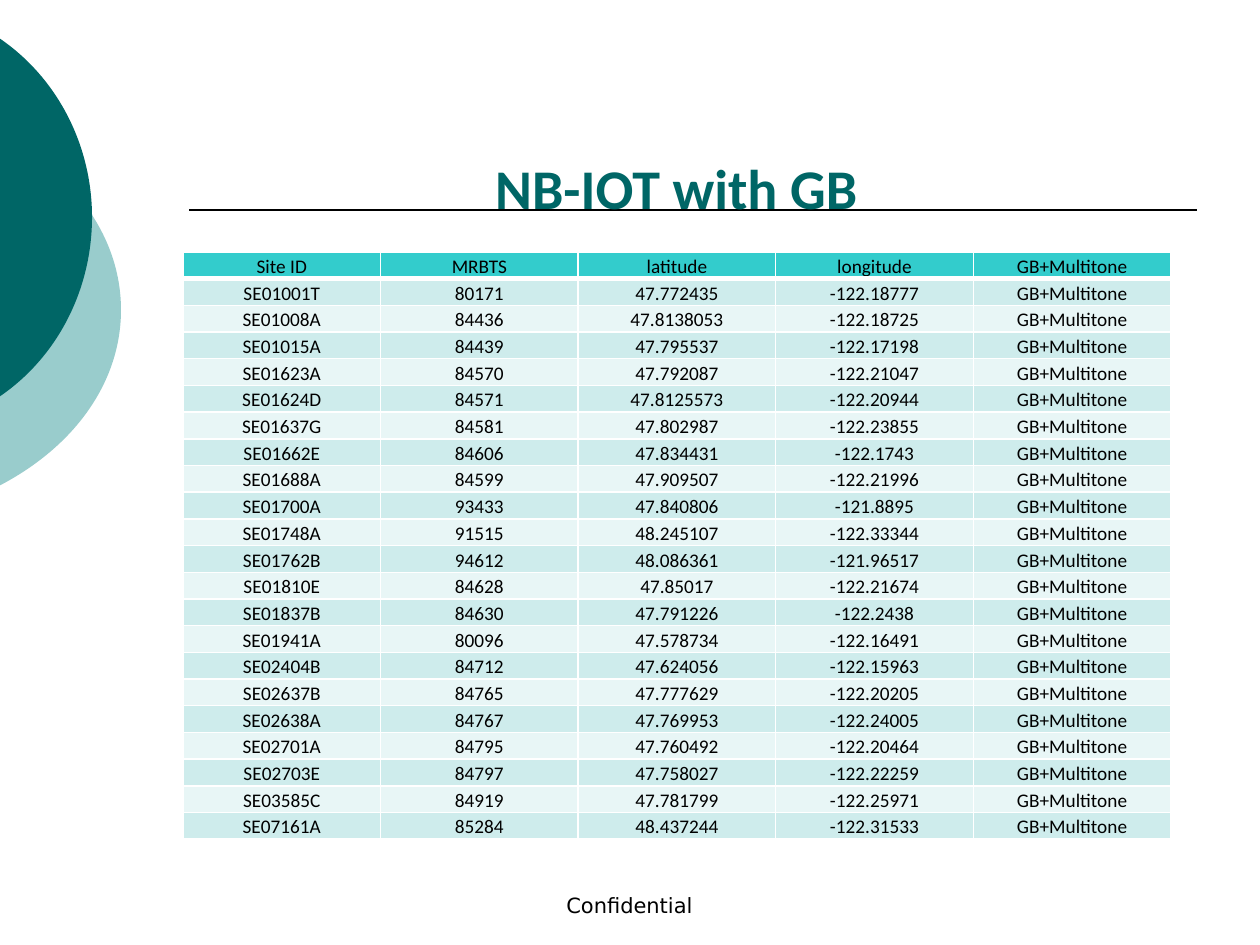
from lxml import etree
from pptx import Presentation
from pptx.dml.color import RGBColor
from pptx.enum import shapes, text
from pptx.oxml import ns
from pptx.util import Emu, Pt

# Content
TITLE = "NB-IOT with GB"
FOOTER = "Confidential"
MODE = "GB+Multitone"
HEADINGS = ("Site ID", "MRBTS", "latitude", "longitude", MODE)
SITES = [
    ("SE01001T", "80171", "47.772435", "-122.18777"),
    ("SE01008A", "84436", "47.8138053", "-122.18725"),
    ("SE01015A", "84439", "47.795537", "-122.17198"),
    ("SE01623A", "84570", "47.792087", "-122.21047"),
    ("SE01624D", "84571", "47.8125573", "-122.20944"),
    ("SE01637G", "84581", "47.802987", "-122.23855"),
    ("SE01662E", "84606", "47.834431", "-122.1743"),
    ("SE01688A", "84599", "47.909507", "-122.21996"),
    ("SE01700A", "93433", "47.840806", "-121.8895"),
    ("SE01748A", "91515", "48.245107", "-122.33344"),
    ("SE01762B", "94612", "48.086361", "-121.96517"),
    ("SE01810E", "84628", "47.85017", "-122.21674"),
    ("SE01837B", "84630", "47.791226", "-122.2438"),
    ("SE01941A", "80096", "47.578734", "-122.16491"),
    ("SE02404B", "84712", "47.624056", "-122.15963"),
    ("SE02637B", "84765", "47.777629", "-122.20205"),
    ("SE02638A", "84767", "47.769953", "-122.24005"),
    ("SE02701A", "84795", "47.760492", "-122.20464"),
    ("SE02703E", "84797", "47.758027", "-122.22259"),
    ("SE03585C", "84919", "47.781799", "-122.25971"),
    ("SE07161A", "85284", "48.437244", "-122.31533"),
]
# Each disc: colour, frame of the whole disc, and two joined Bezier curves
# along its visible edge, from top to bottom
DISCS = [
    ("99CCCC", (-446, 94, 567, 431),
     [(-1, 134), (76, 174), (121, 239), (121, 310),
      (121, 381), (76, 446), (-1, 486)]),
    ("006666", (-334, 0, 426, 435),
     [(-1, 38), (58, 78), (92, 146), (92, 217),
      (92, 289), (58, 357), (-1, 397)]),
]
HEADER_FILL, BANDS = "33CCCC", ("CEECEC", "E8F6F6")
TITLE_BOX = (183, 116, 987, 111)
TABLE_BOX = (183, 252, 988, 588)
FOOTER_BOX = (430, 861, 399, 63)
RULE = (189, 210, 1197, 210)


def px(length):
    return Emu(round(length * 914400 / 126))


def box(lengths):
    return [px(length) for length in lengths]


def color(value):
    return RGBColor.from_string(value)


def place(shape, lengths):
    shape.left, shape.top, shape.width, shape.height = box(lengths)


def write(frame, words, font, size, ink="000000", bold=False):
    paragraph = frame.paragraphs[0]
    paragraph.alignment = text.PP_ALIGN.CENTER
    run = paragraph.add_run()
    run.text = words
    run.font.name, run.font.size, run.font.bold = font, Pt(size), bold
    run.font.color.rgb = color(ink)


def bend(shape, frame, curve):
    """Give the freeform a curved edge inside its frame."""
    left, top, width, height = frame
    outline = shape._element.find(".//" + ns.qn("a:path"))
    for part in list(outline):
        outline.remove(part)
    outline.set("w", str(width))
    outline.set("h", str(height))
    for command, points in (("moveTo", curve[:1]), ("cubicBezTo", curve[1:4]),
                            ("cubicBezTo", curve[4:]), ("close", [])):
        step = etree.SubElement(outline, ns.qn("a:" + command))
        for x, y in points:
            etree.SubElement(step, ns.qn("a:pt"), x=str(x - left), y=str(y - top))


def border(cell, side, points):
    line = etree.SubElement(cell._tc.get_or_add_tcPr(), ns.qn("a:ln" + side),
                            w=str(Pt(points)))
    fill = etree.SubElement(line, ns.qn("a:solidFill"))
    etree.SubElement(fill, ns.qn("a:srgbClr"), val="FFFFFF")


deck = Presentation()
deck.slide_width, deck.slide_height = px(1260), px(945)
slide = deck.slides.add_slide(deck.slide_layouts[5])

# Discs at the left edge
for fill, frame, curve in DISCS:
    builder = slide.shapes.build_freeform(*curve[0], scale=px(1))
    builder.add_line_segments(curve[3::3], close=True)
    disc = builder.convert_to_shape()
    place(disc, frame)
    bend(disc, frame, curve)
    disc.shadow.inherit = False
    disc.fill.solid()
    disc.fill.fore_color.rgb = color(fill)
    disc.line.fill.background()

# Rule under the title
rule = slide.shapes.add_connector(shapes.MSO_CONNECTOR.STRAIGHT, *box(RULE))
rule.line.color.rgb = color("000000")
rule.line.width = Pt(1)
etree.SubElement(rule._element.spPr, ns.qn("a:effectLst"))

# Title, brought in front of the rule
title = slide.shapes.title
place(title, TITLE_BOX)
title.text_frame.auto_size = text.MSO_AUTO_SIZE.NONE
title.text_frame.vertical_anchor = text.MSO_ANCHOR.BOTTOM
write(title.text_frame, TITLE, "Calibri", 32, "006666", True)
title.element.getparent().append(title.element)

# Footer
footer = slide.shapes.add_textbox(*box(FOOTER_BOX)).text_frame
footer.word_wrap = True
footer.vertical_anchor = text.MSO_ANCHOR.BOTTOM
write(footer, FOOTER, "DejaVu Sans", 12)

# Site table
rows = [HEADINGS] + [(*site, MODE) for site in SITES]
sites = slide.shapes.add_table(len(rows), len(HEADINGS), *box(TABLE_BOX)).table
for r, row in enumerate(rows):
    for c, words in enumerate(row):
        cell = sites.cell(r, c)
        cell.margin_left = cell.margin_right = cell.margin_top = px(1)
        cell.margin_bottom = 0
        cell.vertical_anchor = text.MSO_ANCHOR.BOTTOM
        for side in "LRTB":
            under_header = (r, side) in ((0, "B"), (1, "T"))
            border(cell, side, 3 if under_header else 1)
        cell.fill.solid()
        cell.fill.fore_color.rgb = color(BANDS[(r - 1) % 2] if r else HEADER_FILL)
        write(cell.text_frame, words, "Calibri", 11)

deck.save("out.pptx")
